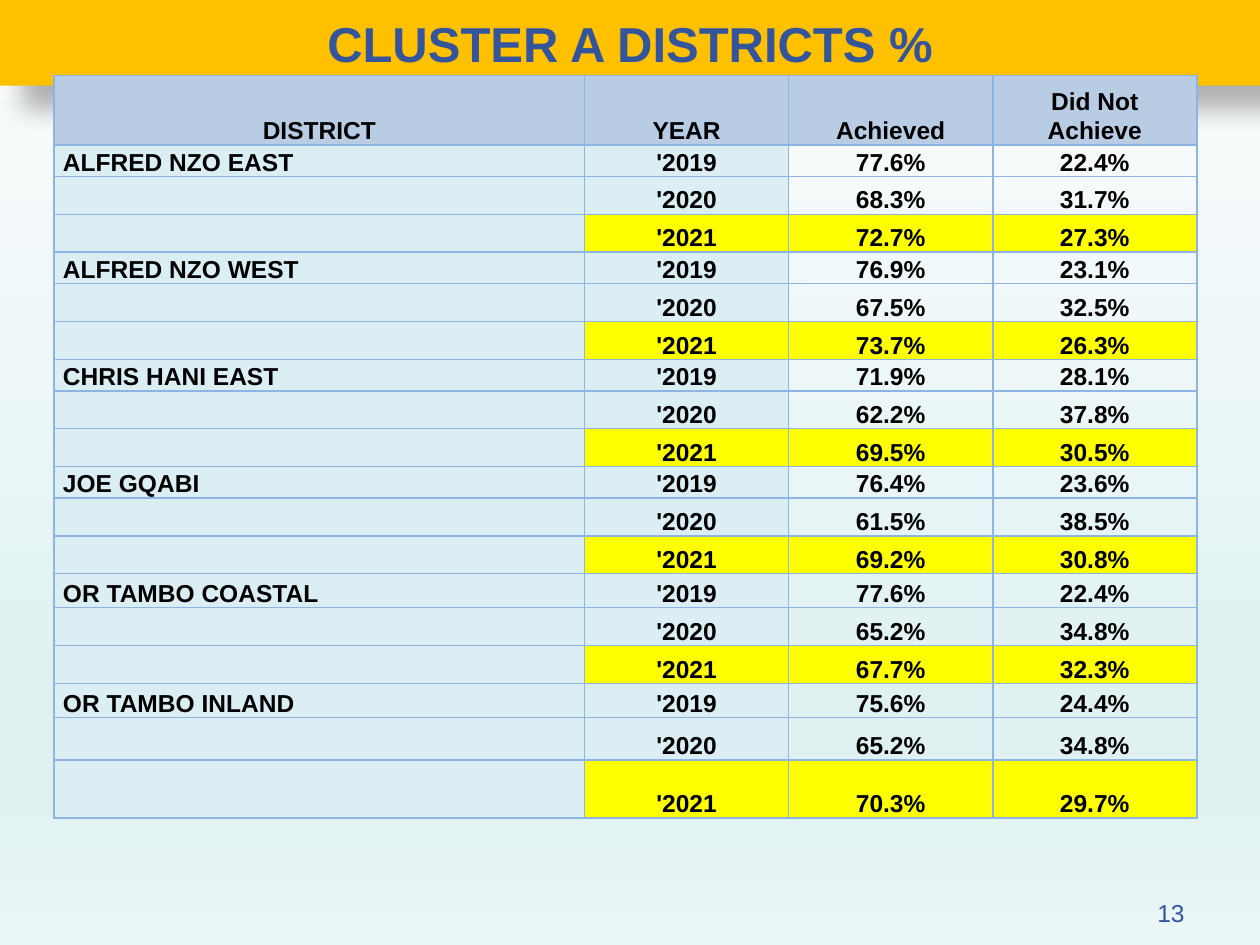
from dataclasses import dataclass
from typing import Optional

from lxml import etree
from pptx import Presentation
from pptx.dml.color import RGBColor
from pptx.enum.shapes import MSO_SHAPE
from pptx.enum.text import MSO_ANCHOR, PP_ALIGN
from pptx.oxml import parse_xml
from pptx.oxml.ns import nsdecls, qn
from pptx.slide import Slide
from pptx.table import _Cell
from pptx.text.text import _Paragraph
from pptx.util import Inches, Pt

RECTANGLE = MSO_SHAPE.RECTANGLE
LEFT, CENTER, RIGHT = PP_ALIGN.LEFT, PP_ALIGN.CENTER, PP_ALIGN.RIGHT
MIDDLE, BOTTOM = MSO_ANCHOR.MIDDLE, MSO_ANCHOR.BOTTOM

BLACK = RGBColor(0x00, 0x00, 0x00)
BLUE = RGBColor(0x34, 0x54, 0x9C)
AMBER = RGBColor(0xFF, 0xC0, 0x00)
HEADER_BLUE = RGBColor(0xB8, 0xCC, 0xE4)
PALE_BLUE = RGBColor(0xDA, 0xEE, 0xF3)
YELLOW = RGBColor(0xFF, 0xFF, 0x00)
BORDER_BLUE = RGBColor(0x8D, 0xB4, 0xE2)
BACKGROUND_STOPS = (
    (0, RGBColor(0xFC, 0xFD, 0xFE)),
    (74, RGBColor(0xE0, 0xF1, 0xF2)),
    (83, RGBColor(0xE0, 0xF1, 0xF2)),
    (100, RGBColor(0xEB, 0xF6, 0xF7)),
)

FONT = "Arial"
HEADERS = ("DISTRICT", "YEAR", "Achieved", "Did Not Achieve")
YEARS = ("'2019", "'2020", "'2021")
COLUMN_WIDTHS = (4.21, 1.62, 1.62, 1.62)
HEADER_HEIGHT = 0.55
USUAL_HEIGHTS = (0.23, 0.3, 0.3)


@dataclass(frozen=True)
class District:
    name: str
    achieved: tuple[float, float, float]
    heights: tuple[float, float, float] = USUAL_HEIGHTS


DISTRICTS = (
    District("ALFRED NZO EAST", (77.6, 68.3, 72.7)),
    District("ALFRED NZO WEST", (76.9, 67.5, 73.7)),
    District("CHRIS HANI EAST", (71.9, 62.2, 69.5)),
    District("JOE GQABI", (76.4, 61.5, 69.2)),
    District("OR TAMBO COASTAL", (77.6, 65.2, 67.7), (0.27, 0.3, 0.3)),
    District("OR TAMBO INLAND", (75.6, 65.2, 70.3), (0.27, 0.34, 0.46)),
)


def add_text(paragraph: _Paragraph, text: str, size: int, color: RGBColor,
             alignment: PP_ALIGN, bold: bool) -> None:
    paragraph.alignment = alignment
    run = paragraph.add_run()
    run.text = text
    run.font.name = FONT
    run.font.size = Pt(size)
    run.font.bold = bold
    run.font.color.rgb = color


def paint_background(slide: Slide) -> None:
    fill = slide.background.fill
    fill.gradient()
    fill.gradient_angle = 270
    stop_list = slide.element.find(".//" + qn("a:gsLst"))
    for stop in list(stop_list):
        stop_list.remove(stop)
    for percent, color in BACKGROUND_STOPS:
        stop = etree.SubElement(stop_list, qn("a:gs"), pos=str(percent * 1000))
        etree.SubElement(stop, qn("a:srgbClr"), val=str(color))


def add_title(slide: Slide) -> None:
    banner = slide.shapes.add_shape(RECTANGLE, Inches(0), Inches(0), Inches(10), Inches(0.68))
    banner.fill.solid()
    banner.fill.fore_color.rgb = AMBER
    banner.line.fill.background()
    banner.shadow.inherit = False
    effects = banner.element.spPr.find(qn("a:effectLst"))
    effects.append(parse_xml(
        f'<a:outerShdw {nsdecls("a")} blurRad="{Pt(15)}" dist="{Pt(18)}" dir="2700000" '
        'algn="tl" rotWithShape="0"><a:srgbClr val="000000"><a:alpha val="30000"/>'
        '</a:srgbClr></a:outerShdw>'))
    frame = banner.text_frame
    frame.word_wrap = True
    frame.vertical_anchor = MIDDLE
    add_text(frame.paragraphs[0], "CLUSTER A DISTRICTS %", 28, BLUE, CENTER, True)


def add_page_number(slide: Slide) -> None:
    box = slide.shapes.add_textbox(Inches(7.17), Inches(7.08), Inches(2.33), Inches(0.27))
    box.text_frame.word_wrap = True
    add_text(box.text_frame.paragraphs[0], "13", 14, BLUE, RIGHT, False)


def add_borders(cell: _Cell) -> None:
    properties = cell._tc.get_or_add_tcPr()
    for side in ("a:lnL", "a:lnR", "a:lnT", "a:lnB"):
        line = etree.SubElement(properties, qn(side), w=str(Pt(1)))
        solid = etree.SubElement(line, qn("a:solidFill"))
        etree.SubElement(solid, qn("a:srgbClr"), val=str(BORDER_BLUE))


def fill_cell(cell: _Cell, text: str, fill: Optional[RGBColor], alignment: PP_ALIGN) -> None:
    add_borders(cell)
    cell.margin_left = cell.margin_right = Inches(0.07)
    cell.margin_top = cell.margin_bottom = Inches(0)
    cell.vertical_anchor = BOTTOM
    if fill is None:
        cell.fill.background()
    else:
        cell.fill.solid()
        cell.fill.fore_color.rgb = fill
    if text:
        paragraph = cell.text_frame.paragraphs[0]
        paragraph.line_spacing = 1.07
        add_text(paragraph, text, 14, BLACK, alignment, True)


def add_results_table(slide: Slide) -> None:
    heights = [HEADER_HEIGHT] + [height for district in DISTRICTS for height in district.heights]
    table = slide.shapes.add_table(
        len(heights), len(HEADERS), Inches(0.43), Inches(0.6),
        Inches(sum(COLUMN_WIDTHS)), Inches(sum(heights))).table
    table.first_row = False
    table.horz_banding = False
    for column, width in zip(table.columns, COLUMN_WIDTHS):
        column.width = Inches(width)
    for row, height in zip(table.rows, heights):
        row.height = Inches(height)

    for column_index, header in enumerate(HEADERS):
        fill_cell(table.cell(0, column_index), header, HEADER_BLUE, CENTER)
    row_index = 1
    for district in DISTRICTS:
        for year, achieved in zip(YEARS, district.achieved):
            latest = year == YEARS[-1]
            name = district.name if year == YEARS[0] else ""
            year_fill = YELLOW if latest else PALE_BLUE
            value_fill = YELLOW if latest else None
            fill_cell(table.cell(row_index, 0), name, PALE_BLUE, LEFT)
            fill_cell(table.cell(row_index, 1), year, year_fill, CENTER)
            for column_index, value in enumerate((achieved, 100 - achieved), start=2):
                fill_cell(table.cell(row_index, column_index), f"{value:.1f}%", value_fill, CENTER)
            row_index += 1


def main() -> None:
    presentation = Presentation()
    presentation.slide_width = Inches(10)
    presentation.slide_height = Inches(7.5)
    slide = presentation.slides.add_slide(presentation.slide_layouts[6])
    paint_background(slide)
    add_title(slide)
    add_page_number(slide)
    add_results_table(slide)
    presentation.save("out.pptx")


if __name__ == "__main__":
    main()
